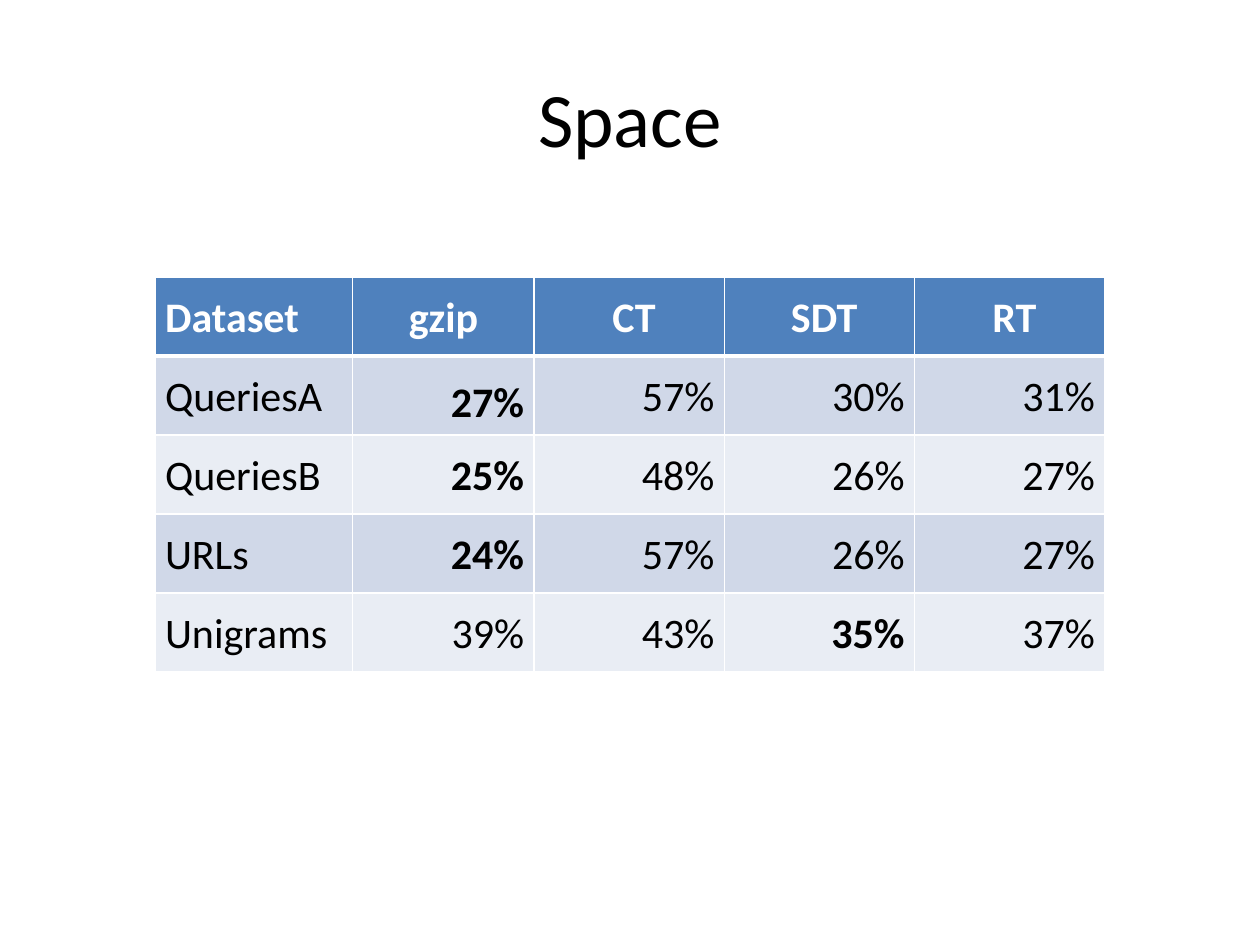
"""Build the slide that compares the space used by each dataset."""
from dataclasses import dataclass
from typing import Any

from lxml import etree
from pptx import Presentation
from pptx.dml.color import RGBColor
from pptx.enum.text import MSO_ANCHOR, PP_ALIGN
from pptx.oxml.ns import qn
from pptx.util import Inches, Pt

LEFT, CENTER, RIGHT = PP_ALIGN.LEFT, PP_ALIGN.CENTER, PP_ALIGN.RIGHT
MIDDLE, BOTTOM = MSO_ANCHOR.MIDDLE, MSO_ANCHOR.BOTTOM
TITLE_ONLY = 5
FONT_NAME = "Calibri"
COLORS = {
    "text": "000000",
    "header_text": "FFFFFF",
    "header": "4F81BD",
    "odd_row": "D0D8E8",
    "even_row": "E9EDF4",
    "border": "FFFFFF",
}
COLUMN_WIDTHS = (1.57, 1.44, 1.51, 1.51, 1.51)
ROW_HEIGHT = 0.62
CELL_MARGINS = {
    "margin_left": Inches(0.08),
    "margin_top": Inches(0.12),
    "margin_right": Inches(0.08),
    "margin_bottom": Inches(0.1),
}
TIGHT_MARGINS = CELL_MARGINS | {"margin_top": Inches(0.07), "margin_bottom": Inches(0.05)}


@dataclass(frozen=True)
class DatasetRow:
    cells: tuple[str, ...]
    best_column: int | None = None
    tight_column: int | None = None


HEADER = DatasetRow(("Dataset", "gzip", " CT", " SDT", " RT"))
DATASETS = (
    DatasetRow(("QueriesA", "27%", "57%", "30%", "31%"), best_column=1, tight_column=1),
    DatasetRow(("QueriesB", "25%", "48%", "26%", "27%"), best_column=1),
    DatasetRow(("URLs", "24%", "57%", "26%", "27%"), best_column=1),
    DatasetRow(("Unigrams", "39%", "43%", "35%", "37%"), best_column=3),
)


def set_attributes(target: Any, values: dict[str, Any]) -> None:
    for name, value in values.items():
        setattr(target, name, value)


def write_text(paragraph: Any, text: str, size: int, color: str,
               alignment: Any, bold: bool = False) -> None:
    paragraph.alignment = alignment
    run = paragraph.add_run()
    run.text = text
    set_attributes(run.font, {"name": FONT_NAME, "size": Pt(size), "bold": bold})
    run.font.color.rgb = RGBColor.from_string(COLORS[color])


def add_borders(cell: Any, widths: dict[str, int]) -> None:
    properties = cell._tc.get_or_add_tcPr()
    for position, (side, width) in enumerate(widths.items()):
        line = etree.Element(qn(f"a:ln{side}"), w=str(Pt(width)))
        fill = etree.SubElement(line, qn("a:solidFill"))
        etree.SubElement(fill, qn("a:srgbClr"), val=COLORS["border"])
        properties.insert(position, line)


def add_title(slide: Any, text: str) -> None:
    title = slide.shapes.title
    set_attributes(title, {"left": Inches(0.5), "top": Inches(0.3),
                           "width": Inches(9), "height": Inches(1.25)})
    title.text_frame.vertical_anchor = MIDDLE
    write_text(title.text_frame.paragraphs[0], text, 44, "text", CENTER)


def fill_row(table: Any, row_index: int, row: DatasetRow) -> None:
    is_header = row_index == 0
    fill_name = "header" if is_header else ("even_row", "odd_row")[row_index % 2]
    value_alignment = CENTER if is_header else RIGHT
    borders = {"L": 1, "R": 1, "T": 3 if row_index == 1 else 1, "B": 3 if is_header else 1}
    for column_index, text in enumerate(row.cells):
        cell = table.cell(row_index, column_index)
        is_tight = column_index == row.tight_column
        set_attributes(cell, TIGHT_MARGINS if is_tight else CELL_MARGINS)
        cell.vertical_anchor = BOTTOM
        cell.fill.solid()
        cell.fill.fore_color.rgb = RGBColor.from_string(COLORS[fill_name])
        add_borders(cell, borders)
        write_text(cell.text_frame.paragraphs[0], text, 24,
                   "header_text" if is_header else "text",
                   value_alignment if column_index else LEFT,
                   is_header or column_index == row.best_column)


def add_space_table(slide: Any, rows: tuple[DatasetRow, ...]) -> None:
    table = slide.shapes.add_table(
        len(rows), len(COLUMN_WIDTHS), Inches(1.23), Inches(2.2),
        Inches(sum(COLUMN_WIDTHS)), Inches(ROW_HEIGHT * len(rows))).table
    for column, width in zip(table.columns, COLUMN_WIDTHS):
        column.width = Inches(width)
    for row_index, row in enumerate(rows):
        fill_row(table, row_index, row)


def main() -> None:
    presentation = Presentation()
    set_attributes(presentation, {"slide_width": Inches(10), "slide_height": Inches(7.5)})
    slide = presentation.slides.add_slide(presentation.slide_layouts[TITLE_ONLY])
    add_title(slide, "Space")
    add_space_table(slide, (HEADER, *DATASETS))
    presentation.save("out.pptx")


if __name__ == "__main__":
    main()
